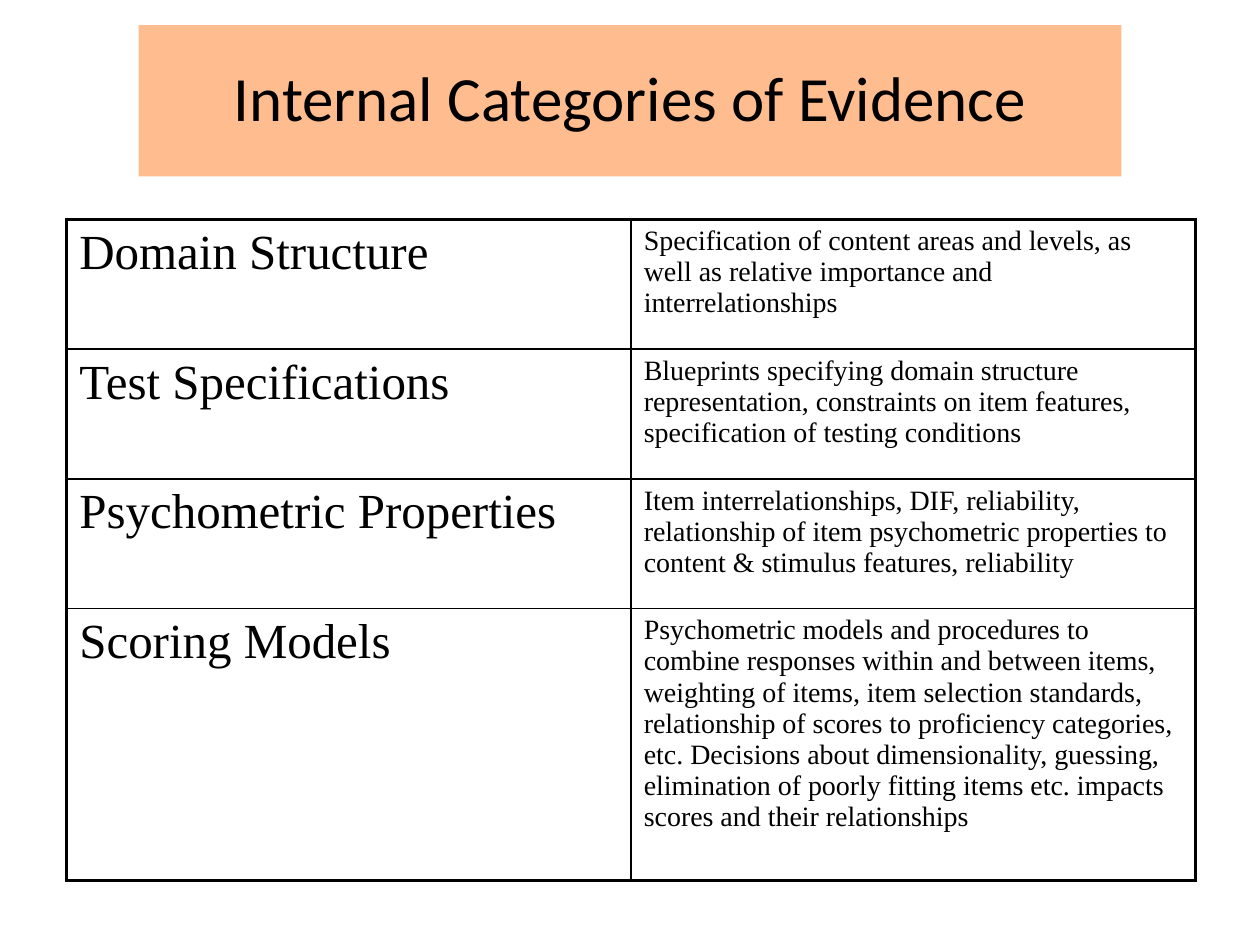
from lxml.etree import SubElement
from pptx import Presentation
from pptx.dml.color import RGBColor
from pptx.enum.shapes import MSO_SHAPE
from pptx.enum.text import MSO_ANCHOR, PP_ALIGN
from pptx.oxml import parse_xml
from pptx.oxml.ns import nsdecls, qn
from pptx.util import Inches, Pt

HUES = {"ink": "000000", "peach": "FFBC8F"}
WIDE, HIGH = 10, 7.5
THIN, THICK = 1, 2.25
ROWS = [
    ("Domain Structure", "Specification of content areas and levels, as well as "
     "relative importance and interrelationships"),
    ("Test Specifications", "Blueprints specifying domain structure representation, "
     "constraints on item features, specification of testing conditions"),
    ("Psychometric Properties", "Item interrelationships, DIF, reliability, relationship "
     "of item psychometric properties to content & stimulus features, reliability"),
    ("Scoring Models", "Psychometric models and procedures to combine responses within "
     "and between items, weighting of items, item selection standards, relationship of "
     "scores to proficiency categories, etc. Decisions about dimensionality, guessing, "
     "elimination of poorly fitting items etc. impacts scores and their relationships"),
]


class Deck:
    """Hold the style and current slide; lengths are shares of the slide's size."""

    def __init__(self):
        self.show = Presentation()
        self.show.slide_width, self.show.slide_height = Inches(WIDE), Inches(HIGH)
        self.slide = self.show.slides.add_slide(self.show.slide_layouts[6])

    def area(self, left, top, width, height):
        return [Inches(part * size) for part, size in
                zip((left, top, width, height), (WIDE, HIGH) * 2)]

    def label(self, frame, text, size, face):
        line = frame.paragraphs[0]
        run = line.add_run()
        run.text = text
        run.font.size, run.font.name = Pt(size), face
        run.font.color.rgb = RGBColor.from_string(HUES["ink"])
        return line

    def title(self, text, *place):
        box = self.slide.shapes.add_shape(MSO_SHAPE.RECTANGLE, *self.area(*place))
        box.shadow.inherit = False
        box.fill.solid()
        box.fill.fore_color.rgb = RGBColor.from_string(HUES["peach"])
        box.line.fill.background()
        frame = box.text_frame
        frame.word_wrap, frame.vertical_anchor = True, MSO_ANCHOR.MIDDLE
        line = self.label(frame, text, 36, "Calibri")
        line.alignment, line.line_spacing = PP_ALIGN.CENTER, 0.9

    def edge(self, cell, sides):
        props = cell._tc.get_or_add_tcPr()
        for spot, (side, width) in enumerate(sides.items()):
            rule = parse_xml(f'<a:ln{side} {nsdecls("a")} w="{Pt(width)}"/>')
            fill = SubElement(rule, qn("a:solidFill"))
            SubElement(fill, qn("a:srgbClr"), val=HUES["ink"])
            props.insert(spot, rule)

    def table(self, rows, tall, *place):
        grid = self.slide.shapes.add_table(len(rows), 2, *self.area(*place)).table
        grid.first_row = grid.horz_banding = False
        last = len(rows) - 1
        for r, texts in enumerate(rows):
            grid.rows[r].height = Inches(tall[r] * HIGH)
            for c, (text, size) in enumerate(zip(texts, (28, 16))):
                cell = grid.cell(r, c)
                cell.fill.background()
                self.label(cell.text_frame, text, size, "Times New Roman")
                outer = {"L": c == 0, "R": c == 1, "T": r == 0, "B": r == last}
                self.edge(cell, {side: THICK if out else THIN for side, out in outer.items()})


def main():
    deck = Deck()
    deck.title("Internal Categories of Evidence", 0.11, 0.2 / HIGH, 0.78, 0.16)
    tall = [1.03 / HIGH] * 3 + [2.16 / HIGH]
    deck.table(ROWS, tall, 0.053, 1.74 / HIGH, 0.896, sum(tall))
    deck.show.save("out.pptx")


if __name__ == "__main__":
    main()
